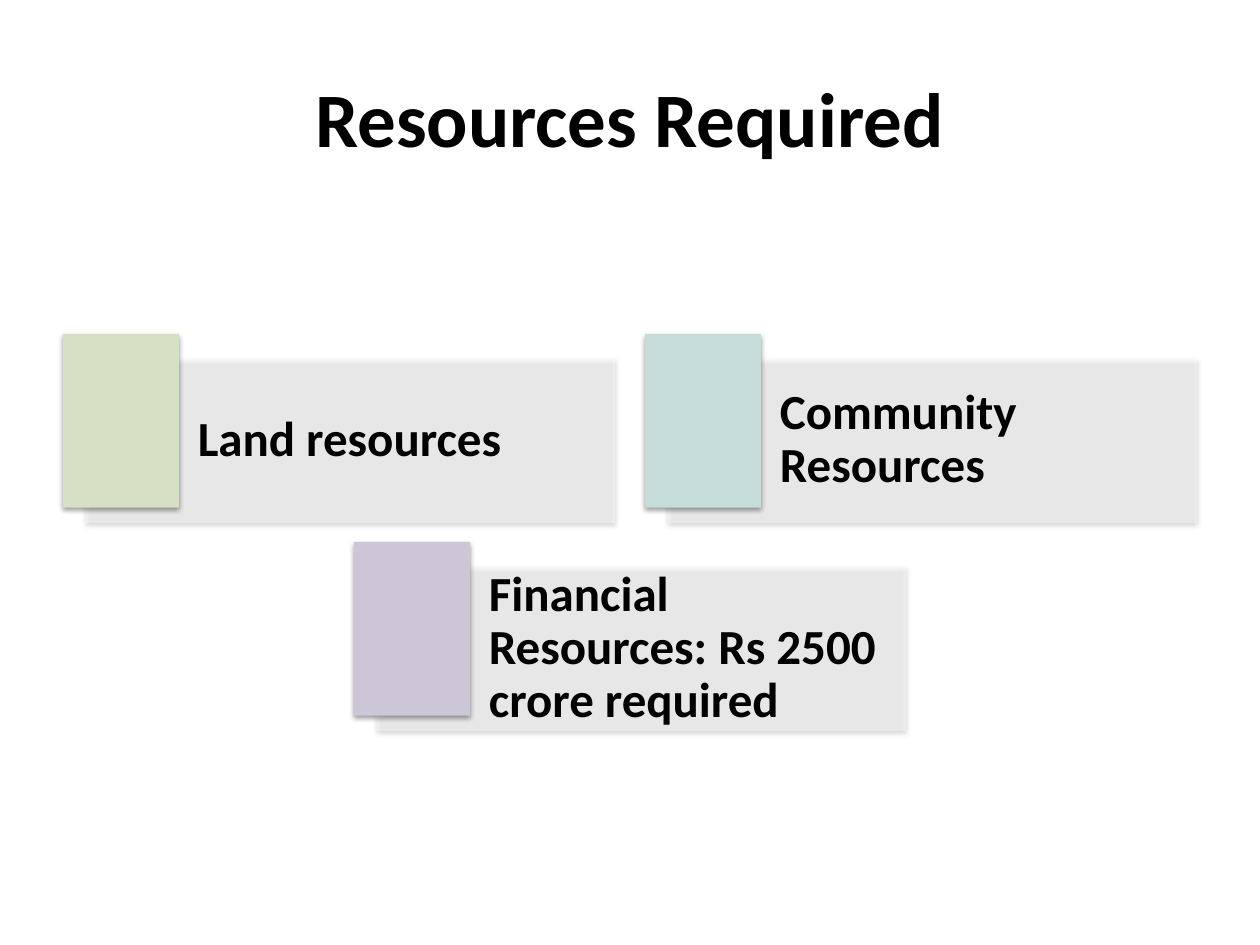
from lxml import etree
from pptx import Presentation
from pptx import util as u
from pptx.dml.color import RGBColor
from pptx.enum import shapes, text
from pptx.oxml import ns

MARGIN, TOP = 0.5, 2.65
TILE_W, TILE_H = 4.38, 1.5
COLUMN_STEP, ROW_STEP = 4.62, 1.65
RESOURCES = [
    ("Land resources", "D5E0C4", 0, 0),
    ("Community Resources", "C5DCDA", 1, 0),
    ("Financial Resources: Rs 2500 crore required", "CDC6D7", 0.5, 1),
]


def color(value):
    """Turn a hex string into a colour."""
    return RGBColor.from_string(value)


def add_alpha(parent, percent):
    """Give a colour element an opacity in percent."""
    etree.SubElement(parent, ns.qn("a:alpha"), val=str(percent * 1000))


def add_shadow(shape):
    """Drop a soft shadow straight down from a shape."""
    shape.shadow.inherit = False
    effects = shape._element.spPr.find(ns.qn("a:effectLst"))
    shadow = etree.SubElement(
        effects, ns.qn("a:outerShdw"), blurRad=str(u.Pt(3.1)),
        dist=str(u.Pt(1.6)), dir="5400000", rotWithShape="0")
    add_alpha(etree.SubElement(shadow, ns.qn("a:srgbClr"), val="000000"), 38)


def add_block(slide, box, fill):
    """Add a borderless rectangle with a shadow."""
    block = slide.shapes.add_shape(shapes.MSO_SHAPE.RECTANGLE, *map(u.Inches, box))
    block.fill.solid()
    block.fill.fore_color.rgb = color(fill)
    block.line.fill.background()
    add_shadow(block)
    return block


def add_label(slide, box, wording, size, align, insets):
    """Add bold, vertically centred, wrapping text and return its paragraph."""
    frame = slide.shapes.add_textbox(*map(u.Inches, box)).text_frame
    frame.word_wrap = True
    frame.vertical_anchor = text.MSO_ANCHOR.MIDDLE
    (frame.margin_left, frame.margin_top,
     frame.margin_right, frame.margin_bottom) = map(u.Inches, insets)
    paragraph = frame.paragraphs[0]
    paragraph.text = wording
    paragraph.alignment = align
    font = paragraph.runs[0].font
    font.name, font.size, font.bold = "Calibri", u.Pt(size), True
    font.color.rgb = color("000000")
    return paragraph


def add_title(slide, box):
    """Add the slide title."""
    add_label(slide, box, "Resources Required", 44, text.PP_ALIGN.CENTER,
              (0.1, 0.05, 0.1, 0.05))


def add_resource(slide, box, wording, accent):
    """Add a pale panel with its label and an accent block at its upper left."""
    left, top, width, height = box
    panel_box = (left + 0.18, top + 0.19, width - 0.18, height - 0.19)
    panel = add_block(slide, panel_box, "FFFFFF")
    add_alpha(panel._element.spPr.find(".//" + ns.qn("a:srgbClr")), 40)
    label = add_label(slide, panel_box, wording, 28, text.PP_ALIGN.LEFT,
                      (0.89, 0.12, 0.12, 0.12))
    label.line_spacing = 0.9
    add_block(slide, (left, top, 0.21 * width, 0.92 * height), accent)


def main():
    """Build and save the slide."""
    deck = Presentation()
    deck.slide_width, deck.slide_height = u.Inches(10), u.Inches(7.5)
    slide = deck.slides.add_slide(deck.slide_layouts[6])
    add_title(slide, (MARGIN, 0.3, 9, 1.25))
    for wording, accent, column, row in RESOURCES:
        box = (MARGIN + column * COLUMN_STEP, TOP + row * ROW_STEP, TILE_W, TILE_H)
        add_resource(slide, box, wording, accent)
    deck.save("out.pptx")


if __name__ == "__main__":
    main()
